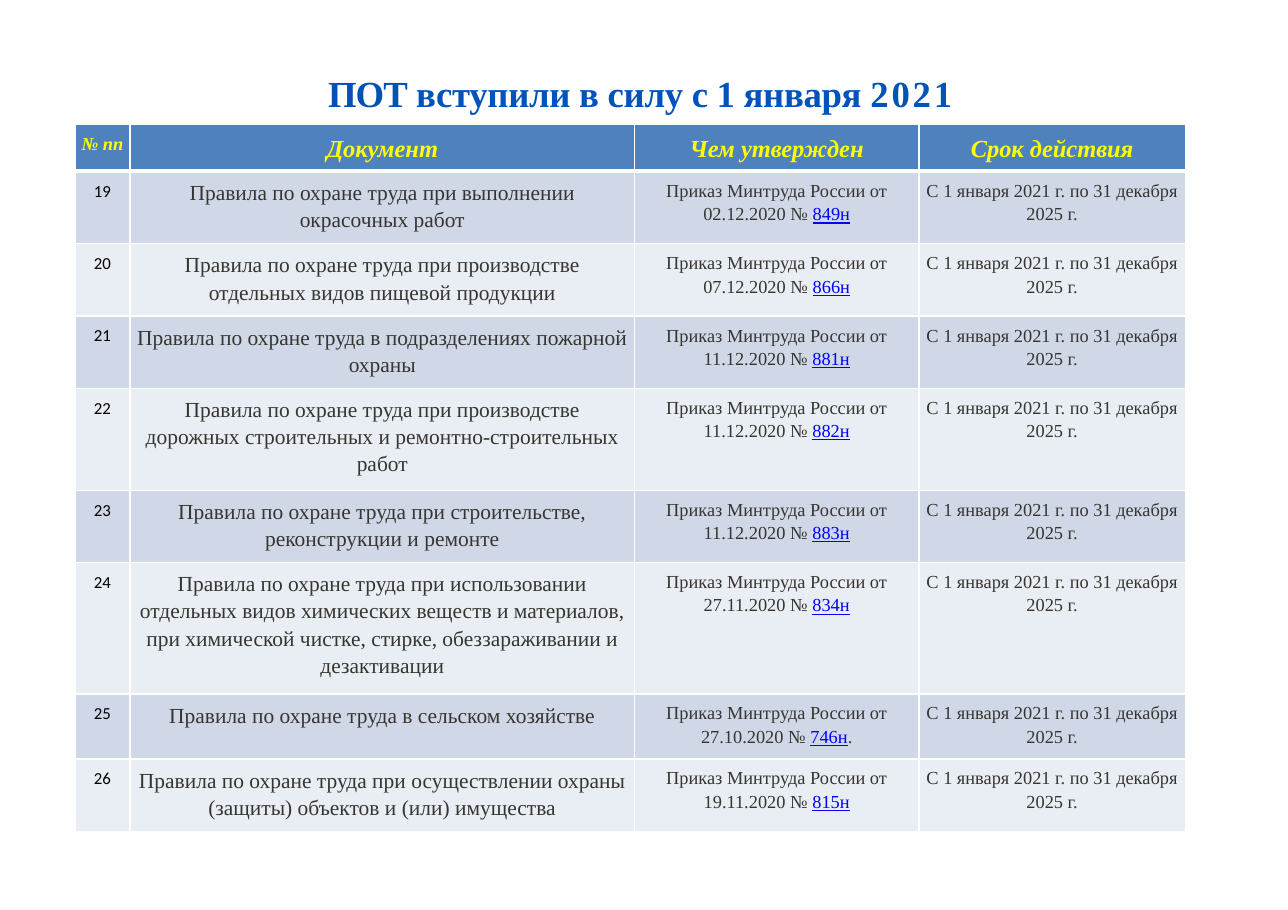
from lxml.etree import SubElement
from pptx import Presentation
from pptx.dml.color import RGBColor
from pptx.enum.text import PP_ALIGN as Align
from pptx.oxml.ns import qn
from pptx.util import Pt

PX = 9144  # 100 px to the inch
COLORS = {
    "title_start": "0350B5", "title_middle": "0052BD", "title_year": "0054B6",
    "header": "4F81BD", "header_text": "FFFF00", "odd": "D0D8E8",
    "even": "E9EDF4", "text": "363530", "number": "000000",
    "link": "0000FF", "border": "FFFFFF",
}
SERIF = "Times New Roman"
FORMATS = {
    "title": dict(name=SERIF, size=Pt(24), bold=True),
    "small_header": dict(name=SERIF, size=Pt(12), bold=True, italic=True),
    "header": dict(name=SERIF, size=Pt(16), bold=True, italic=True),
    "number": dict(name="Calibri", size=Pt(11)),
    "document": dict(name=SERIF, size=Pt(14)),
    "detail": dict(name=SERIF, size=Pt(12)),
    "order": dict(name=SERIF, size=Pt(12), underline=True),
}

COLUMNS = [50, 458, 258, 242]
HEADER_HEIGHT, ROW_HEIGHT = 42, 59
HEADINGS = ["№ пп", "Документ", "Чем утвержден", "Срок действия"]
FIRST_NUMBER = 19
PERIOD = "С 1 января 2021 г. по 31 декабря 2025 г."
# Document, date of the order, number of the order, closing mark
RULES = [
    ("при выполнении окрасочных работ", "02.12.2020", "849н", ""),
    ("при производстве отдельных видов пищевой продукции", "07.12.2020", "866н", ""),
    ("в подразделениях пожарной охраны", "11.12.2020", "881н", ""),
    ("при производстве дорожных строительных и ремонтно-строительных работ",
     "11.12.2020", "882н", ""),
    ("при строительстве, реконструкции и ремонте", "11.12.2020", "883н", ""),
    ("при использовании отдельных видов химических веществ и материалов, "
     "при химической чистке, стирке, обеззараживании и дезактивации",
     "27.11.2020", "834н", ""),
    ("в сельском хозяйстве", "27.10.2020", "746н", "."),
    ("при осуществлении охраны (защиты) объектов и (или) имущества",
     "19.11.2020", "815н", ""),
]


class Page:
    def __init__(self, deck):
        self.slide = deck.slides.add_slide(deck.slide_layouts[6])

    def add_spans(self, para, spans):
        """Each span is text, format name, colour name, letter spacing in points."""
        para.alignment = Align.CENTER
        for text, style, color, spacing in spans:
            span = para.add_run()
            span.text = text
            for key, value in FORMATS[style].items():
                setattr(span.font, key, value)
            span.font.color.rgb = RGBColor.from_string(COLORS[color])
            if spacing:
                span.font._element.set("spc", str(round(spacing * 100)))

    def text(self, left, top, width, height, spans, inset_top):
        box = self.slide.shapes.add_textbox(
            *(length * PX for length in (left, top, width, height)))
        box.text_frame.word_wrap = True
        box.text_frame.margin_top = inset_top * PX
        box.text_frame.margin_bottom = 0
        self.add_spans(box.text_frame.paragraphs[0], spans)

    def cell(self, cell, spans, fill, top=1, bottom=1):
        for side in ("left", "right", "top", "bottom"):
            setattr(cell, f"margin_{side}", 6 * PX)
        para = cell.text_frame.paragraphs[0]
        para.line_spacing = 1.15
        self.add_spans(para, spans)
        # Borders come before the fill in the cell properties
        props = cell._tc.get_or_add_tcPr()
        for side, width in (("L", 1), ("R", 1), ("T", top), ("B", bottom)):
            line = SubElement(props, qn(f"a:ln{side}"), w=str(int(Pt(width))))
            solid = SubElement(line, qn("a:solidFill"))
            SubElement(solid, qn("a:srgbClr"), val=COLORS["border"])
        cell.fill.solid()
        cell.fill.fore_color.rgb = RGBColor.from_string(COLORS[fill])

    def table(self, left, top, columns, heights):
        table = self.slide.shapes.add_table(
            len(heights), len(columns), left * PX, top * PX,
            sum(columns) * PX, sum(heights) * PX).table
        table.first_row = table.horz_banding = False
        for column, width in zip(table.columns, columns):
            column.width = width * PX
        for row, height in zip(table.rows, heights):
            row.height = height * PX
        return table


def main():
    deck = Presentation()
    deck.slide_width, deck.slide_height = 1169 * PX, 826 * PX
    page = Page(deck)

    # Title
    page.text(110, 55, 942, 50, [
        ("ПОТ ", "title", "title_start", -0.6),
        ("вступили в силу с 1 января ", "title", "title_middle", -0.2),
        ("2021", "title", "title_year", 1.8),
    ], inset_top=9)

    # Table header
    table = page.table(68, 113, COLUMNS, [HEADER_HEIGHT] + [ROW_HEIGHT] * len(RULES))
    for index, heading in enumerate(HEADINGS):
        style = "header" if index else "small_header"
        page.cell(table.cell(0, index), [(heading, style, "header_text", 0)],
                  "header", bottom=3)

    # Rules, one to a row
    for row, (subject, date, order, mark) in enumerate(RULES, 1):
        approval = [(f"Приказ Минтруда России от {date} № ", "detail", "text", 0),
                    (order, "order", "link", 0)]
        if mark:
            approval.append((mark, "detail", "text", 0))
        contents = [
            [(str(FIRST_NUMBER + row - 1), "number", "number", 0)],
            [(f"Правила по охране труда {subject}", "document", "text", 0)],
            approval,
            [(PERIOD, "detail", "text", 0)],
        ]
        for index, spans in enumerate(contents):
            page.cell(table.cell(row, index), spans, "odd" if row % 2 else "even",
                      top=3 if row == 1 else 1)

    deck.save("out.pptx")


if __name__ == "__main__":
    main()
